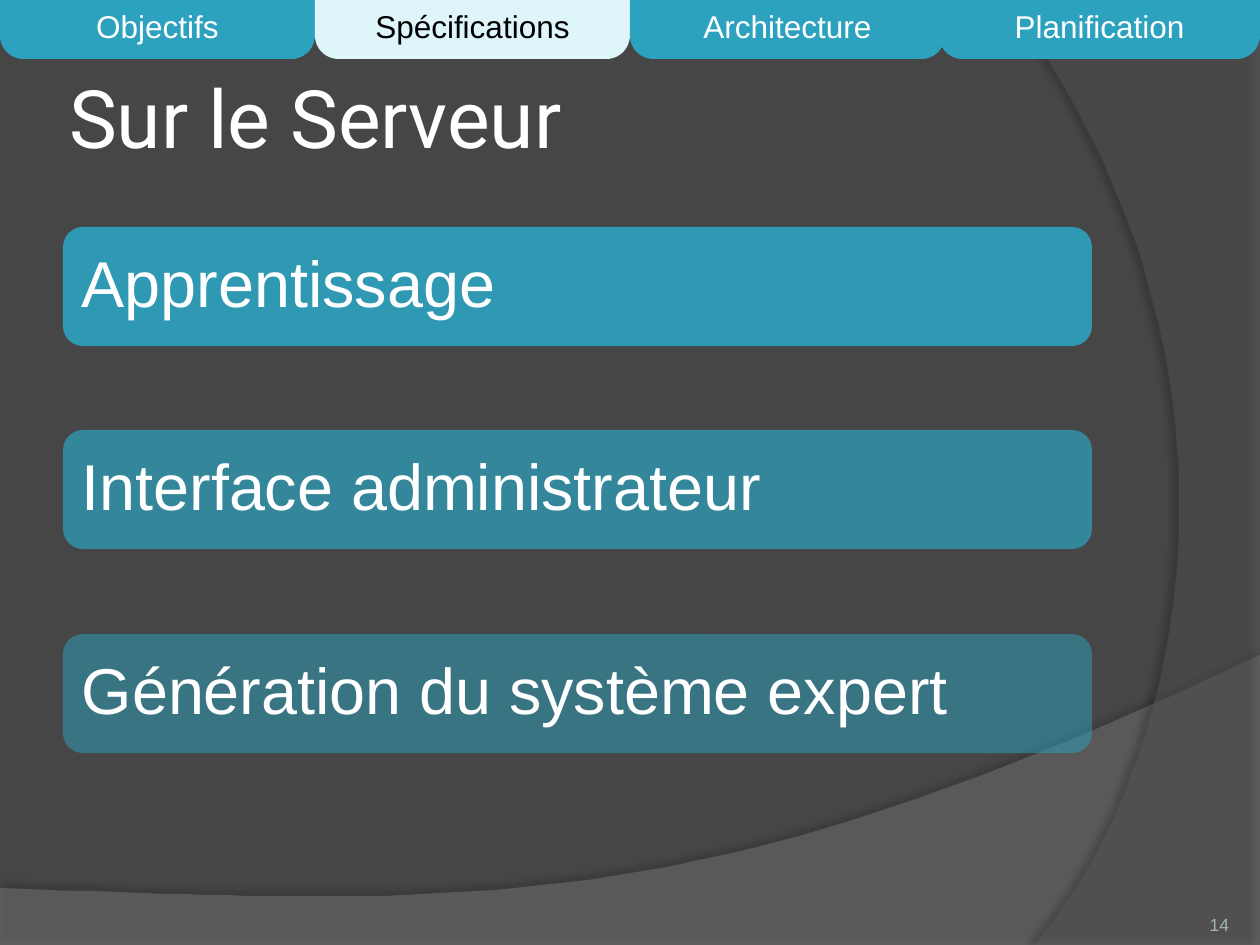
from dataclasses import dataclass

from lxml.etree import SubElement
from pptx import Presentation
from pptx.dml.color import RGBColor
from pptx.enum.shapes import MSO_SHAPE
from pptx.enum.text import MSO_ANCHOR, MSO_AUTO_SIZE, PP_ALIGN
from pptx.oxml.ns import qn
from pptx.util import Emu, Pt

EMU_PER_PX = 914400 / 126
CURVE_STEPS = 60

CHARCOAL = RGBColor(0x46, 0x46, 0x46)
WAVE_GRAY = RGBColor(0x7F, 0x7F, 0x7F)
ARC_GRAY = RGBColor(0x5E, 0x5E, 0x5E)
TEAL = RGBColor(0x2D, 0xA2, 0xBF)
PALE_TEAL = RGBColor(0xDE, 0xF5, 0xFA)
NUMBER_GRAY = RGBColor(0xA4, 0xB5, 0xB9)
WHITE = RGBColor(0xFF, 0xFF, 0xFF)
BLACK = RGBColor(0x00, 0x00, 0x00)

Point = tuple[float, float]


@dataclass(frozen=True)
class Sweep:
    corners: list[Point]
    controls: tuple[Point, Point]
    end: Point
    color: RGBColor
    opacity: int
    shadow_opacity: int
    shadow_distance: float
    shadow_angle: int


@dataclass(frozen=True)
class Tab:
    label: str
    left: int
    width: int
    fill: RGBColor = TEAL
    ink: RGBColor = WHITE


@dataclass(frozen=True)
class Topic:
    label: str
    top: int
    opacity: int


SWEEPS = [
    Sweep([(0, 888), (0, 946), (1260, 946), (1260, 655)],
          ((704, 919), (493, 906)), (0, 888), WAVE_GRAY, 45, 35, 3.5, 270),
    Sweep([(1260, 3), (1260, 945), (1034, 945)],
          ((1178, 780), (1283, 378)), (1008, 0), ARC_GRAY, 40, 45, 4, 180),
]
TABS = [
    Tab("Objectifs", 0, 315),
    Tab("Spécifications", 315, 315, PALE_TEAL, BLACK),
    Tab("Architecture", 630, 315),
    Tab("Planification", 939, 321),
]
TOPICS = [
    Topic(label, 227 + 407 * row // 2, 90 - 20 * row)
    for row, label in enumerate(
        ["Apprentissage", "Interface administrateur", "Génération du système expert"])
]


def px(length: int) -> Emu:
    return Emu(round(length * EMU_PER_PX))


def box(left: int, top: int, width: int, height: int) -> tuple[Emu, ...]:
    return px(left), px(top), px(width), px(height)


def paint(shape, color: RGBColor, opacity: int = 100) -> None:
    shape.shadow.inherit = False
    shape.line.fill.background()
    shape.fill.solid()
    shape.fill.fore_color.rgb = color
    if opacity < 100:
        fill_color = next(shape.element.spPr.iter(qn("a:srgbClr")))
        SubElement(fill_color, qn("a:alpha"), val=str(opacity * 1000))


def write(frame, wording: str, size: int, ink: RGBColor, align: PP_ALIGN,
          anchor: MSO_ANCHOR = MSO_ANCHOR.MIDDLE, font: str = "Arial"):
    frame.word_wrap = True
    frame.auto_size = MSO_AUTO_SIZE.NONE
    frame.vertical_anchor = anchor
    paragraph = frame.paragraphs[0]
    paragraph.alignment = align
    run = paragraph.add_run()
    run.text = wording
    run.font.size = Pt(size)
    run.font.name = font
    run.font.color.rgb = ink
    return paragraph


def set_insets(frame, horizontal: int, vertical: int) -> None:
    frame.margin_left = frame.margin_right = px(horizontal)
    frame.margin_top = frame.margin_bottom = px(vertical)


def bezier(points: list[Point]) -> list[Point]:
    curve = []
    for step in range(1, CURVE_STEPS + 1):
        t = step / CURVE_STEPS
        weights = ((1 - t) ** 3, 3 * t * (1 - t) ** 2, 3 * t * t * (1 - t), t ** 3)
        curve.append(tuple(sum(w * point[axis] for w, point in zip(weights, points))
                           for axis in (0, 1)))
    return curve


def draw_sweep(slide, sweep: Sweep) -> None:
    start, *corners = sweep.corners
    outline = slide.shapes.build_freeform(*start, scale=EMU_PER_PX)
    curve = bezier([corners[-1], *sweep.controls, sweep.end])
    outline.add_line_segments(corners + curve, close=True)
    backdrop = outline.convert_to_shape()
    paint(backdrop, sweep.color, sweep.opacity)
    effects = backdrop.element.spPr.find(qn("a:effectLst"))
    shadow = SubElement(effects, qn("a:outerShdw"), blurRad=str(Pt(4)),
                        dist=str(Pt(sweep.shadow_distance)),
                        dir=str(sweep.shadow_angle * 60000),
                        algn="ctr", rotWithShape="0")
    shade = SubElement(shadow, qn("a:srgbClr"), val=str(BLACK))
    SubElement(shade, qn("a:alpha"), val=str(sweep.shadow_opacity * 1000))


def draw_topic(slide, topic: Topic) -> None:
    panel = slide.shapes.add_shape(MSO_SHAPE.ROUNDED_RECTANGLE, *box(63, topic.top, 1029, 119))
    paint(panel, TEAL, topic.opacity)
    set_insets(panel.text_frame, 13, 13)
    write(panel.text_frame, topic.label, 37, WHITE, PP_ALIGN.LEFT).line_spacing = 0.9


def draw_tab(slide, tab: Tab) -> None:
    header = slide.shapes.add_shape(MSO_SHAPE.ROUND_2_SAME_RECTANGLE,
                                    *box(tab.left, 0, tab.width, 59))
    header.adjustments[0] = 0
    header.adjustments[1] = 0.4
    paint(header, tab.fill)
    write(header.text_frame, tab.label, 18, tab.ink, PP_ALIGN.CENTER)


def main() -> None:
    """Build the server specifications slide and save it."""
    deck = Presentation()
    deck.slide_width, deck.slide_height = px(1260), px(945)
    slide = deck.slides.add_slide(deck.slide_layouts[5])
    slide.background.fill.solid()
    slide.background.fill.fore_color.rgb = CHARCOAL

    for sweep in SWEEPS:
        draw_sweep(slide, sweep)

    title = slide.shapes.title
    title.left, title.top, title.width, title.height = box(63, 38, 1029, 157)
    set_insets(title.text_frame, 6, 6)
    write(title.text_frame, "Sur le Serveur", 46, WHITE, PP_ALIGN.LEFT, font="Roboto")

    for topic in TOPICS:
        draw_topic(slide, topic)

    page_number = slide.shapes.add_textbox(*box(1124, 885, 105, 50))
    set_insets(page_number.text_frame, 0, 0)
    write(page_number.text_frame, "14", 10, NUMBER_GRAY, PP_ALIGN.RIGHT, MSO_ANCHOR.BOTTOM)

    for tab in TABS:
        draw_tab(slide, tab)

    deck.save("out.pptx")


if __name__ == "__main__":
    main()
